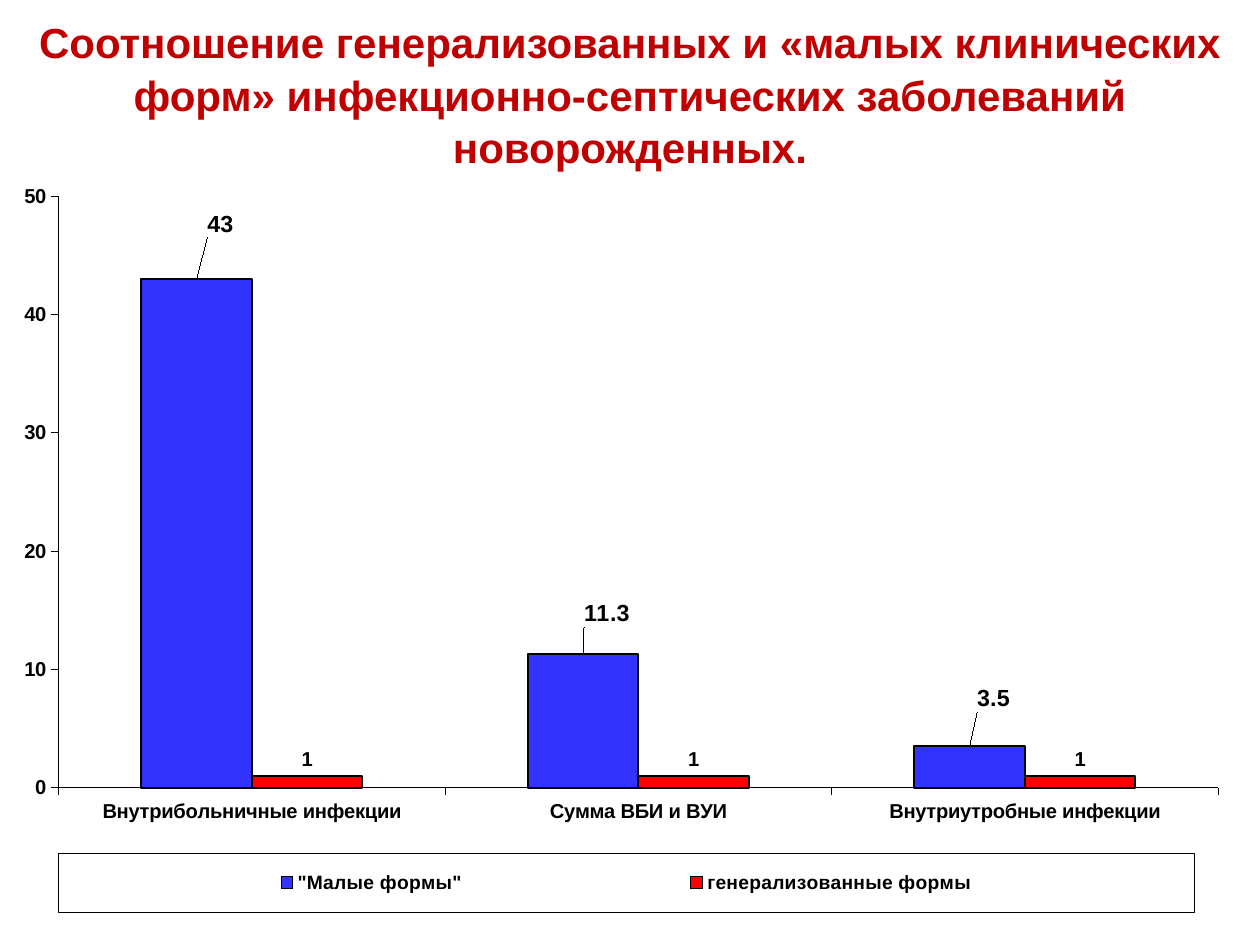
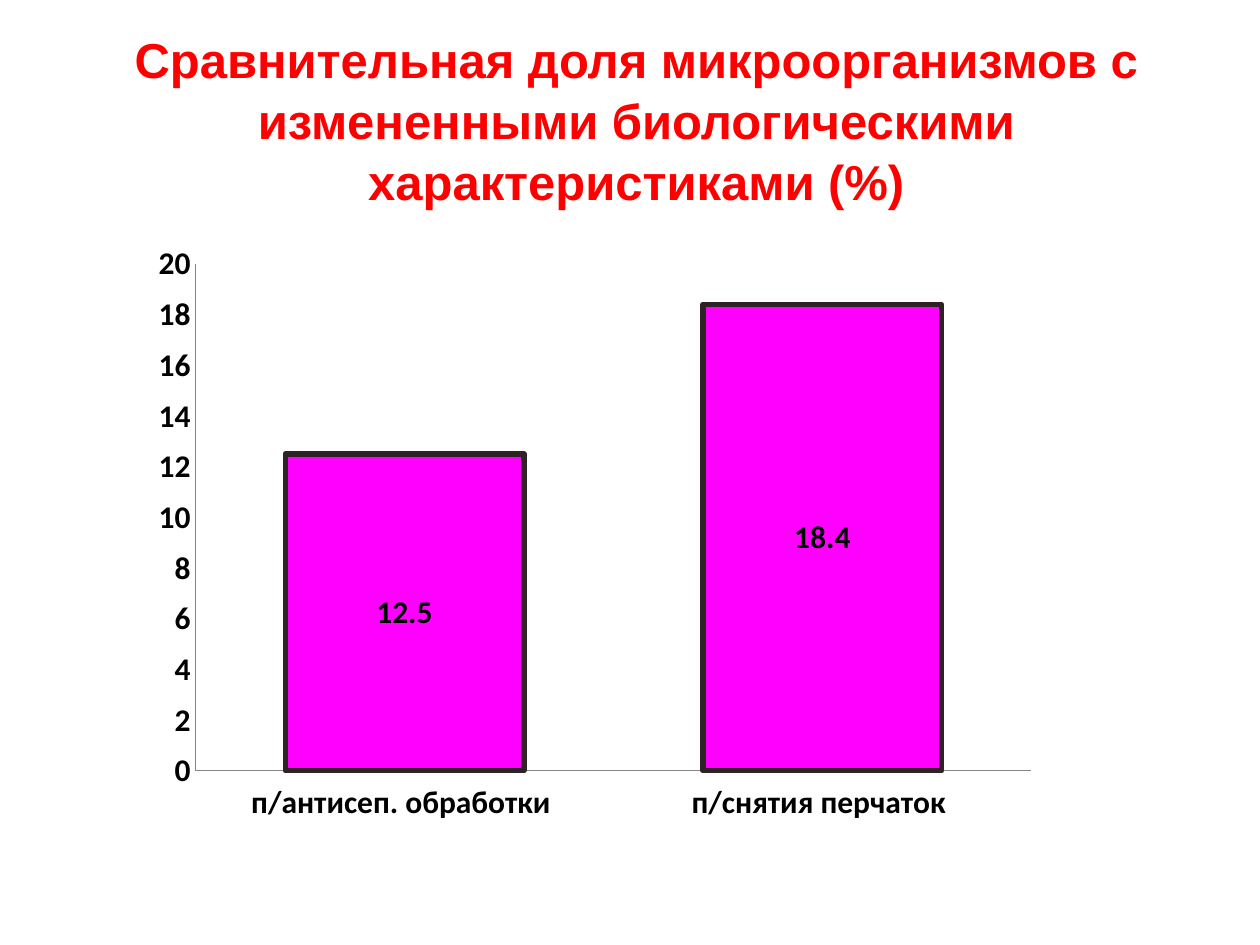
from pptx import Presentation
from pptx.chart.data import CategoryChartData as Data
from pptx.dml.color import RGBColor
from pptx.enum.chart import XL_CHART_TYPE as Kind, XL_LABEL_POSITION as Pos
from pptx.enum.chart import XL_LEGEND_POSITION as Side, XL_TICK_LABEL_POSITION as Tag
from pptx.enum.chart import XL_TICK_MARK as Tick
from pptx.enum.text import MSO_ANCHOR as Anchor, MSO_AUTO_SIZE as Auto, PP_ALIGN as Align
from pptx.oxml import parse_xml
from pptx.oxml.ns import nsdecls, qn
from pptx.util import Inches, Pt

BLACK, BLUE, RED = "000000", "3333FF", "FF0000"
DARK, GREY, PINK, EDGE = "C00000", "868686", "FF00FF", "2E2224"


def color(code):
    """Turn a hex string into a colour."""
    return RGBColor.from_string(code)


def style(font, size, face="Arial", tint=BLACK):
    """Set a bold font."""
    font.name, font.size, font.bold = face, Pt(size), True
    font.color.rgb = color(tint)


def write(frame, text, size, tint, gap=1.04):
    """Write one centred paragraph into a text frame."""
    frame.word_wrap, frame.auto_size = True, Auto.NONE
    frame.vertical_anchor = Anchor.MIDDLE
    frame.text = text
    para = frame.paragraphs[0]
    para.alignment, para.line_spacing = Align.CENTER, gap
    style(para.runs[0].font, size, tint=tint)


def add_page(deck, text, box, size, tint):
    """Add a slide with a title placed in the given box."""
    page = deck.slides.add_slide(deck.slide_layouts[5])
    title = page.shapes.title
    title.left, title.top, title.width, title.height = map(Inches, box)
    write(title.text_frame, text, size, tint)
    return page


def layout(x, y, w=None, h=None, inner=False):
    """Make a manual layout, as a frame or as a mere offset."""
    parts = ['<c:layoutTarget val="inner"/>'] if inner else []
    if w is not None:
        parts += ['<c:xMode val="edge"/>', '<c:yMode val="edge"/>']
    parts += [f'<c:{key} val="{val}"/>' for key, val in zip("xywh", (x, y, w, h))
              if val is not None]
    return parse_xml(f'<c:layout {nsdecls("c")}><c:manualLayout>{"".join(parts)}'
                     '</c:manualLayout></c:layout>')


def clear(node):
    """Drop any layout the node already has."""
    for old in node.findall(qn("c:layout")):
        node.remove(old)


def add_bars(page, kind, box, cats, rows, area, gap, overlap):
    """Add a column chart; rows hold name, values, fill, edge and edge width."""
    data = Data()
    data.categories = cats
    for name, vals, *_ in rows:
        data.add_series(name, vals)
    chart = page.shapes.add_chart(kind, *map(Inches, box), data).chart
    chart.has_title = chart.has_legend = False
    plot = chart.plots[0]
    plot.gap_width, plot.overlap, plot.vary_by_categories = gap, overlap, False
    for bars, (_, _, fill, edge, width) in zip(plot.series, rows):
        bars.invert_if_negative = False
        bars.format.fill.solid()
        bars.format.fill.fore_color.rgb = color(fill)
        bars.format.line.color.rgb = color(edge)
        bars.format.line.width = Pt(width)
    root = chart._chartSpace.chart.plotArea
    clear(root)
    root.insert(0, layout(*area, inner=True))
    return chart


def set_axes(chart, top, step, size, face, tick, tint, width):
    """Format both axes alike and scale the value axis from zero."""
    for axis in (chart.category_axis, chart.value_axis):
        axis.has_major_gridlines = False
        axis.major_tick_mark, axis.minor_tick_mark = tick, Tick.NONE
        axis.format.line.color.rgb = color(tint)
        axis.format.line.width = Pt(width)
        style(axis.tick_labels.font, size, face)
    chart.category_axis.tick_label_position = Tag.LOW
    scale = chart.value_axis
    scale.minimum_scale, scale.maximum_scale, scale.major_unit = 0, top, step


def set_labels(bars, size, face, pos, shifts=()):
    """Show values on the bars, moving the labels that have a shift."""
    labels = bars.data_labels
    labels.show_value, labels.position = True, pos
    style(labels.font, size, face)
    for idx, shift in enumerate(shifts):
        label = bars.points[idx].data_label
        style(label.font, size, face)
        label.position = pos
    for node, shift in zip(labels._element.findall(qn("c:dLbl")), shifts):
        clear(node)
        node.find(qn("c:idx")).addnext(layout(*shift))


def add_legend(chart, area, size):
    """Add a framed legend at the bottom."""
    chart.has_legend = True
    legend = chart.legend
    legend.position, legend.include_in_layout = Side.BOTTOM, False
    style(legend.font, size)
    node = legend._element
    clear(node)
    node.find(qn("c:legendPos")).addnext(layout(*area))
    node.find(qn("c:overlay")).addnext(parse_xml(
        f'<c:spPr {nsdecls("c", "a")}><a:noFill/><a:ln w="3429"><a:solidFill>'
        f'<a:srgbClr val="{BLACK}"/></a:solidFill></a:ln></c:spPr>'))


def forms_page(deck):
    """Compare minor and generalised forms of disease."""
    page = add_page(deck, "Соотношение генерализованных и «малых клинических форм» "
                    "инфекционно-септических заболеваний новорожденных.",
                    (0, 0, 10, 1.48), 24, DARK)
    cats = ["Внутрибольничные инфекции", "Сумма ВБИ и ВУИ", "Внутриутробные инфекции"]
    rows = [('"Малые формы"', (43, 11.3, 3.5), BLUE, BLACK, 1.07),
            ("генерализованные формы", (1, 1, 1), RED, BLACK, 1.07)]
    chart = add_bars(page, Kind.COLUMN_CLUSTERED, (0.18, 1.44, 9.49, 5.8), cats, rows,
                     (0.03, 0.02, 0.97, 0.81), 150, 0)
    set_axes(chart, 50, 10, 11.5, "Arial", Tick.OUTSIDE, BLACK, 0.27)
    minor, major = chart.plots[0].series
    set_labels(minor, 13.3, "Arial", Pos.OUTSIDE_END,
               [(0.02, -0.05), (0.02, -0.03), (0.02, -0.04)])
    set_labels(major, 11.5, "Arial", Pos.OUTSIDE_END)
    add_legend(chart, (0.03, 0.92, 0.95, 0.08), 11)


def share_page(deck):
    """Compare the shares of changed microorganisms."""
    page = add_page(deck, "Сравнительная доля микроорганизмов с измененными "
                    "биологическими характеристиками (%)",
                    (0.2, 0.29, 9.7, 1.3), 28, RED)
    chart = add_bars(page, Kind.COLUMN_STACKED, (1.12, 1.86, 7.21, 4.68),
                     ["п/антисеп. обработки ", "п/снятия перчаток "],
                     [("Series 1", (12.5, 18.4), PINK, EDGE, 3)],
                     (0.06, 0.05, 0.92, 0.86), 75, 100)
    set_axes(chart, 20, 2, 18, "Calibri", Tick.NONE, GREY, 0.75)
    set_labels(chart.plots[0].series[0], 18, "Calibri", Pos.CENTER)


def main():
    """Build the deck and save it."""
    deck = Presentation()
    deck.slide_width, deck.slide_height = Inches(10), Inches(7.5)
    forms_page(deck)
    share_page(deck)
    deck.save("out.pptx")


if __name__ == "__main__":
    main()
